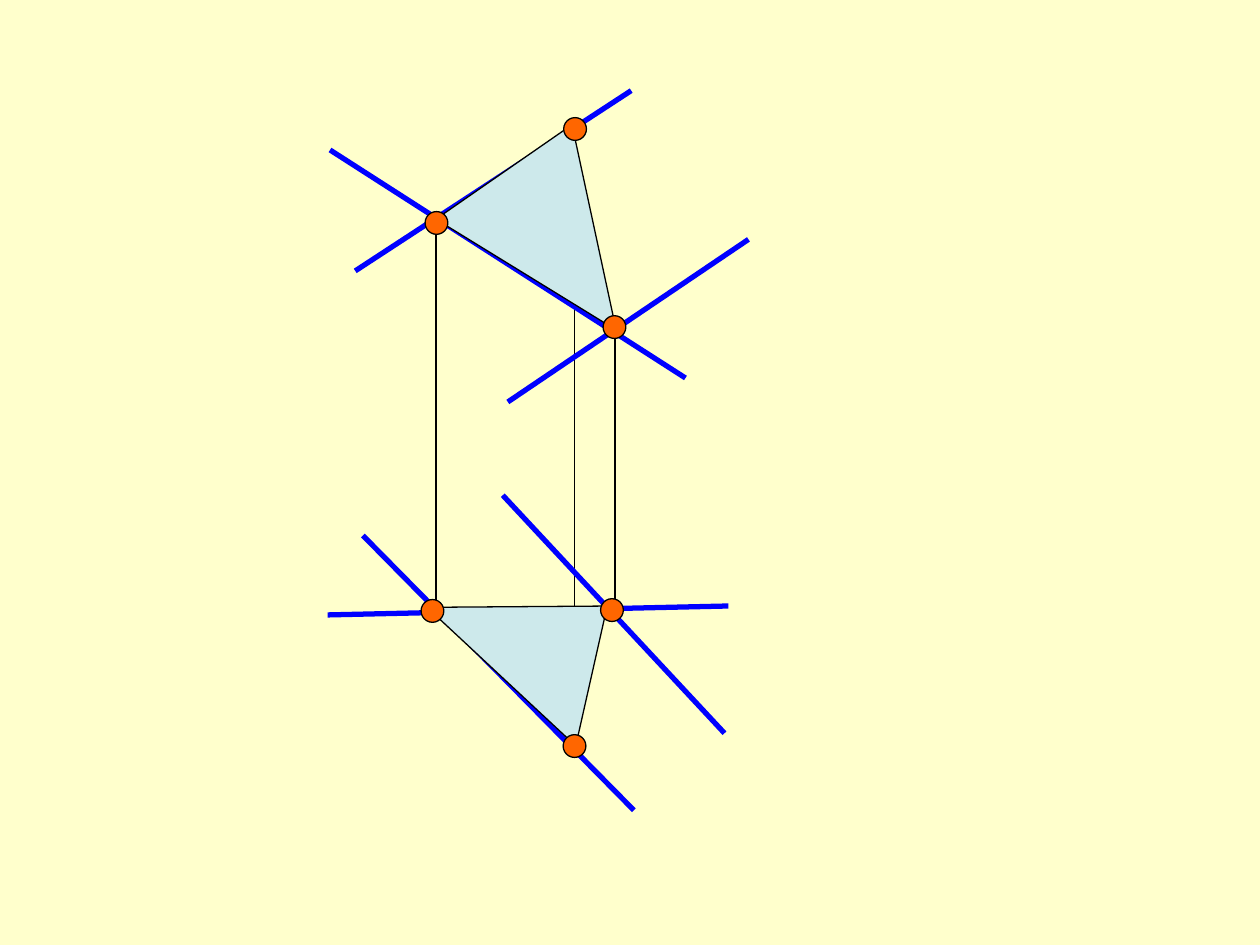
from lxml import etree
from pptx import Presentation
from pptx.dml.color import RGBColor
from pptx.enum.shapes import MSO_CONNECTOR, MSO_SHAPE
from pptx.oxml.ns import qn
from pptx.util import Pt

STRAIGHT = MSO_CONNECTOR.STRAIGHT
OVAL = MSO_SHAPE.OVAL
BLACK, BLUE, PALE_BLUE, ORANGE, CREAM = "000000", "0000FF", "CDE9EB", "FF6600", "FFFFCC"
THIN, THICK = 0.75, 3
DOT_SIZE = 13

UPPER_BOX = (180, 50)
LOWER_BOX = (180, 280)

PROJECTIONS = [
    ((69.1, 78.2), (69.1, 296.3)),
    ((148.3, 29.2), (148.3, 374.1)),
    ((171.4, 143.7), (171.4, 292.7)),
]
UPPER_LINES = [
    ((23, 104.8), (180.7, 1.8)),
    ((211.7, 166), (8.6, 35.7)),
    ((110.2, 179.7), (247.7, 86.8)),
]
UPPER_TRIANGLE = [(69.1, 75.3), (172.1, 138.6), (146.9, 21.3)]
UPPER_DOTS = [(148.6, 23.7), (171.1, 136.9), (69.4, 77.4)]

LOWER_LINES = [
    ((27.4, 26), (182.2, 183)),
    ((7.2, 71.4), (236.2, 66.3)),
    ((107.3, 3), (234, 139)),
]
LOWER_TRIANGLE = [(64.8, 67.8), (71.3, 67), (167, 66.3), (149, 146.2)]
LOWER_DOTS = [(148.3, 146.3), (67.1, 69.1), (169.7, 68.6)]


def color(value):
    return RGBColor.from_string(value)


def place(box, point):
    return Pt(box[0] + point[0]), Pt(box[1] + point[1])


def style_line(line, hex_color, width):
    line.color.rgb = color(hex_color)
    line.width = Pt(width)


def style_shape(shape, fill):
    shape.shadow.inherit = False
    shape.fill.solid()
    shape.fill.fore_color.rgb = color(fill)
    style_line(shape.line, BLACK, THIN)


def add_lines(page, box, segments, hex_color, width):
    for start, end in segments:
        connector = page.shapes.add_connector(STRAIGHT, *place(box, start), *place(box, end))
        style_line(connector.line, hex_color, width)
        etree.SubElement(connector._element.spPr, qn("a:effectLst"))


def add_triangle(page, box, corners):
    points = [place(box, corner) for corner in corners]
    builder = page.shapes.build_freeform(*points[0])
    builder.add_line_segments(points[1:], close=True)
    style_shape(builder.convert_to_shape(), PALE_BLUE)


def add_dots(page, box, centers):
    for x, y in centers:
        corner = place(box, (x - DOT_SIZE / 2, y - DOT_SIZE / 2))
        dot = page.shapes.add_shape(OVAL, *corner, Pt(DOT_SIZE), Pt(DOT_SIZE))
        style_shape(dot, ORANGE)


def add_view(page, box, lines, triangle, dots):
    add_lines(page, box, lines, BLUE, THICK)
    add_triangle(page, box, triangle)
    add_dots(page, box, dots)


def main():
    deck = Presentation()
    deck.slide_width, deck.slide_height = Pt(720), Pt(540)
    page = deck.slides.add_slide(deck.slide_layouts[6])
    page.background.fill.solid()
    page.background.fill.fore_color.rgb = color(CREAM)
    add_lines(page, UPPER_BOX, PROJECTIONS, BLACK, THIN)
    add_view(page, UPPER_BOX, UPPER_LINES, UPPER_TRIANGLE, UPPER_DOTS)
    add_view(page, LOWER_BOX, LOWER_LINES, LOWER_TRIANGLE, LOWER_DOTS)
    deck.save("out.pptx")


if __name__ == "__main__":
    main()
